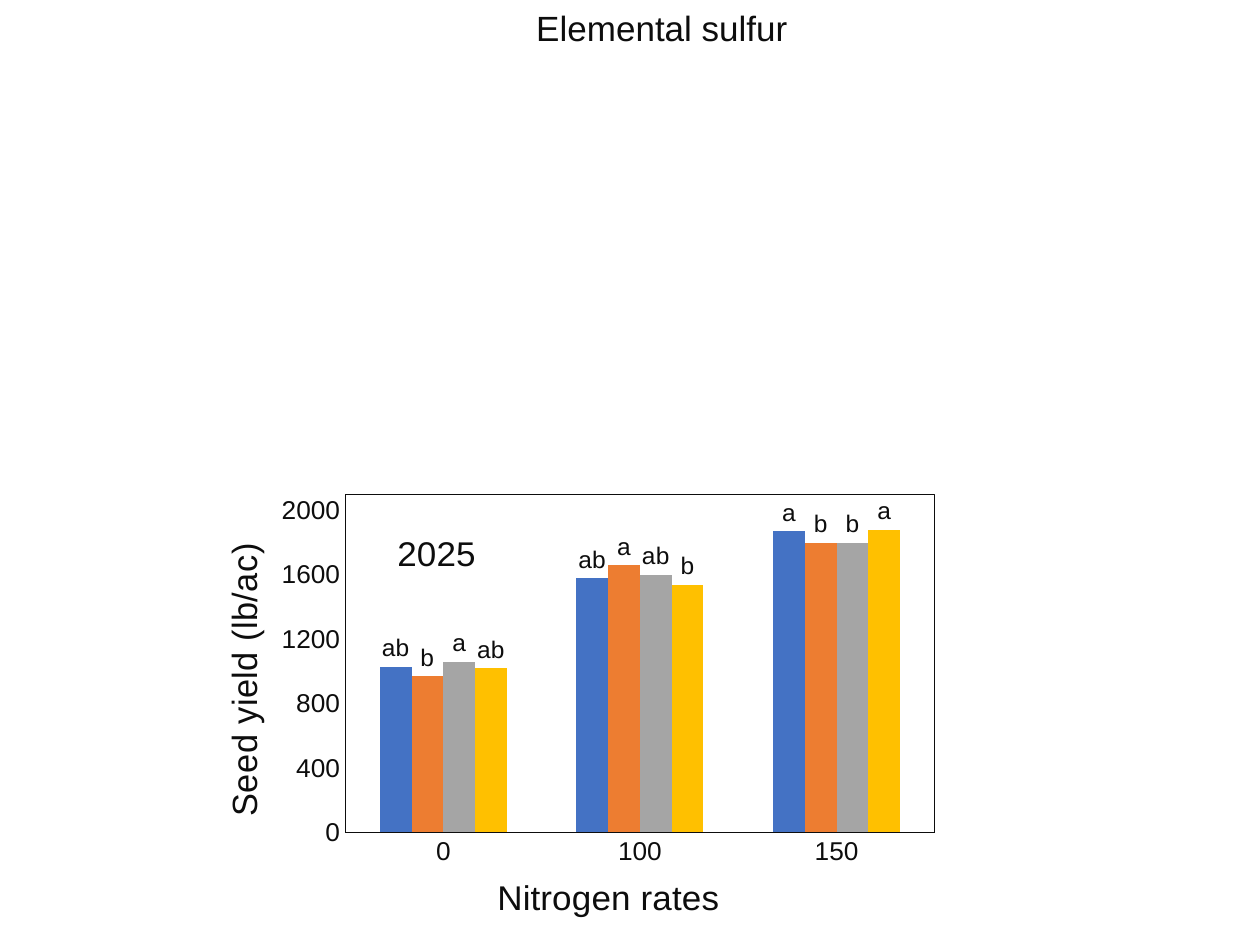
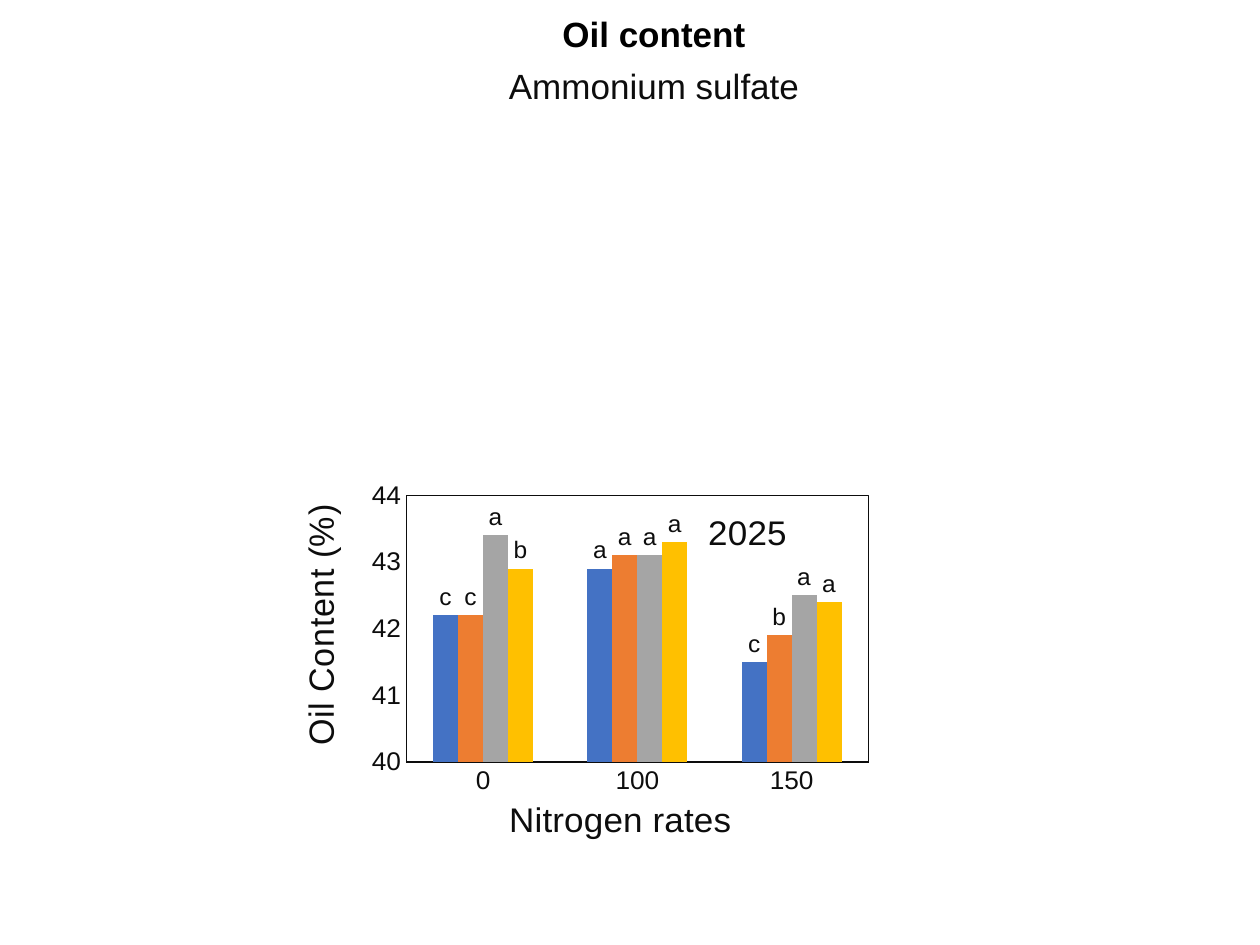
import lxml.etree
import pptx
import pptx.chart.data
import pptx.dml.color
import pptx.enum.chart
import pptx.enum.text
import pptx.oxml.ns
import pptx.util

SCALE = 914400 / 126
INK = "0D0D0D"
FONT = "Arial"
RATES = ["0", "100", "150"]
SERIES_COLORS = ["4472C4", "ED7D31", "A5A5A5", "FFC000"]

SLIDES = [
    {
        "headings": [("Elemental sulfur", (519, 0, 286, 55), False, INK)],
        "chart": (215, 470, 743, 459),
        "plot": (345, 495, 590, 345),
        "year": (391, 526),
        "rates": (491, 878),
        "measure": ("Seed yield (lb/ac)", (212, 544)),
        "scale": (0, 2100, 400),
        "values": [(1030, 1580, 1870), (970, 1660, 1800), (1060, 1600, 1800), (1020, 1540, 1880)],
        "letters": [("ab", "ab", "a"), ("b", "a", "b"), ("a", "ab", "b"), ("ab", "b", "a")],
    },
    {
        "headings": [
            ("Oil content", (548, 6, 212, 55), True, "000000"),
            ("Ammonium sulfate", (494, 58, 320, 55), False, INK),
        ],
        "chart": (292, 472, 588, 378),
        "plot": (406, 496, 463, 274),
        "year": (702, 505),
        "rates": (503, 800),
        "measure": ("Oil Content (%)", (290, 505)),
        "scale": (40, 44, 1),
        "values": [(42.2, 42.9, 41.5), (42.2, 43.1, 41.9), (43.4, 43.1, 42.5), (42.9, 43.3, 42.4)],
        "letters": [("c", "a", "c"), ("c", "a", "b"), ("a", "a", "a"), ("b", "a", "a")],
    },
]


def style_font(font, size, color=INK, bold=False):
    font.name = FONT
    font.size = pptx.util.Pt(size)
    font.bold = bold
    font.color.rgb = pptx.dml.color.RGBColor.from_string(color)


def place(element, index, area, box, inner=False):
    tag = pptx.oxml.ns.qn
    for old_layout in element.findall(tag("c:layout")):
        element.remove(old_layout)
    layout = lxml.etree.Element(tag("c:layout"))
    manual = lxml.etree.SubElement(layout, tag("c:manualLayout"))
    settings = [("layoutTarget", "inner")] if inner else []
    settings += [("xMode", "edge"), ("yMode", "edge")]
    offsets = [box[0] - area[0], box[1] - area[1], *box[2:]]
    for name, length, whole in zip("xywh", offsets, [area[2], area[3]] * 2):
        settings.append((name, f"{length / whole:.4f}"))
    for name, value in settings:
        lxml.etree.SubElement(manual, tag(f"c:{name}")).set("val", value)
    element.insert(index, layout)


presentation = pptx.Presentation()
presentation.slide_width = pptx.util.Inches(10)
presentation.slide_height = pptx.util.Inches(7.5)

for content in SLIDES:
    slide = presentation.slides.add_slide(presentation.slide_layouts[6])
    for text, box, bold, color in content["headings"]:
        shape = slide.shapes.add_textbox(*[round(length * SCALE) for length in box])
        shape.text_frame.word_wrap = True
        paragraph = shape.text_frame.paragraphs[0]
        paragraph.text = text
        paragraph.alignment = pptx.enum.text.PP_ALIGN.CENTER
        style_font(paragraph.font, 20, color, bold)

    chart_data = pptx.chart.data.CategoryChartData(number_format="General")
    chart_data.categories = RATES
    for number, values in enumerate(content["values"], 1):
        chart_data.add_series(f"Series {number}", values)
    area = content["chart"]
    chart = slide.shapes.add_chart(
        pptx.enum.chart.XL_CHART_TYPE.COLUMN_CLUSTERED,
        *[round(length * SCALE) for length in area],
        chart_data,
    ).chart
    chart.has_legend = False
    style_font(chart.font, 15)

    plot = chart.plots[0]
    plot.gap_width = 219
    plot.overlap = 0
    plot.vary_by_categories = False
    for series, color, letters in zip(plot.series, SERIES_COLORS, content["letters"]):
        series.format.fill.solid()
        series.format.fill.fore_color.rgb = pptx.dml.color.RGBColor.from_string(color)
        for index, letter in enumerate(letters):
            label = series.points[index].data_label
            label.text_frame.text = letter
            style_font(label.text_frame.paragraphs[0].font, 14)
            label.position = pptx.enum.chart.XL_LABEL_POSITION.OUTSIDE_END

    for axis in (chart.category_axis, chart.value_axis):
        axis.has_major_gridlines = False
        axis.major_tick_mark = pptx.enum.chart.XL_TICK_MARK.NONE
        axis.minor_tick_mark = pptx.enum.chart.XL_TICK_MARK.NONE
        style_font(axis.tick_labels.font, 15)
    category_line = chart.category_axis.format.line
    category_line.width = pptx.util.Pt(0.75)
    category_line.color.rgb = pptx.dml.color.RGBColor.from_string(INK)
    value_axis = chart.value_axis
    value_axis.format.line.fill.background()
    value_axis.minimum_scale, value_axis.maximum_scale, value_axis.major_unit = content["scale"]

    measure, measure_corner = content["measure"]
    for title, text, corner in [
        (chart.chart_title, "2025", content["year"]),
        (chart.category_axis.axis_title, "Nitrogen rates", content["rates"]),
        (value_axis.axis_title, measure, measure_corner),
    ]:
        title.text_frame.text = text
        style_font(title.text_frame.paragraphs[0].font, 20)
        place(title._element, 1, area, corner)
    for body in value_axis.axis_title._element.iter(pptx.oxml.ns.qn("a:bodyPr")):
        body.set("rot", "-5400000")
        body.set("vert", "horz")

    plot_area = chart._chartSpace.chart.plotArea
    place(plot_area, 0, area, content["plot"], inner=True)
    plot_area.append(pptx.oxml.parse_xml(
        f'<c:spPr {pptx.oxml.ns.nsdecls("c", "a")}><a:noFill/><a:ln w="6350">'
        f'<a:solidFill><a:srgbClr val="{INK}"/></a:solidFill></a:ln></c:spPr>'
    ))

presentation.save("out.pptx")
